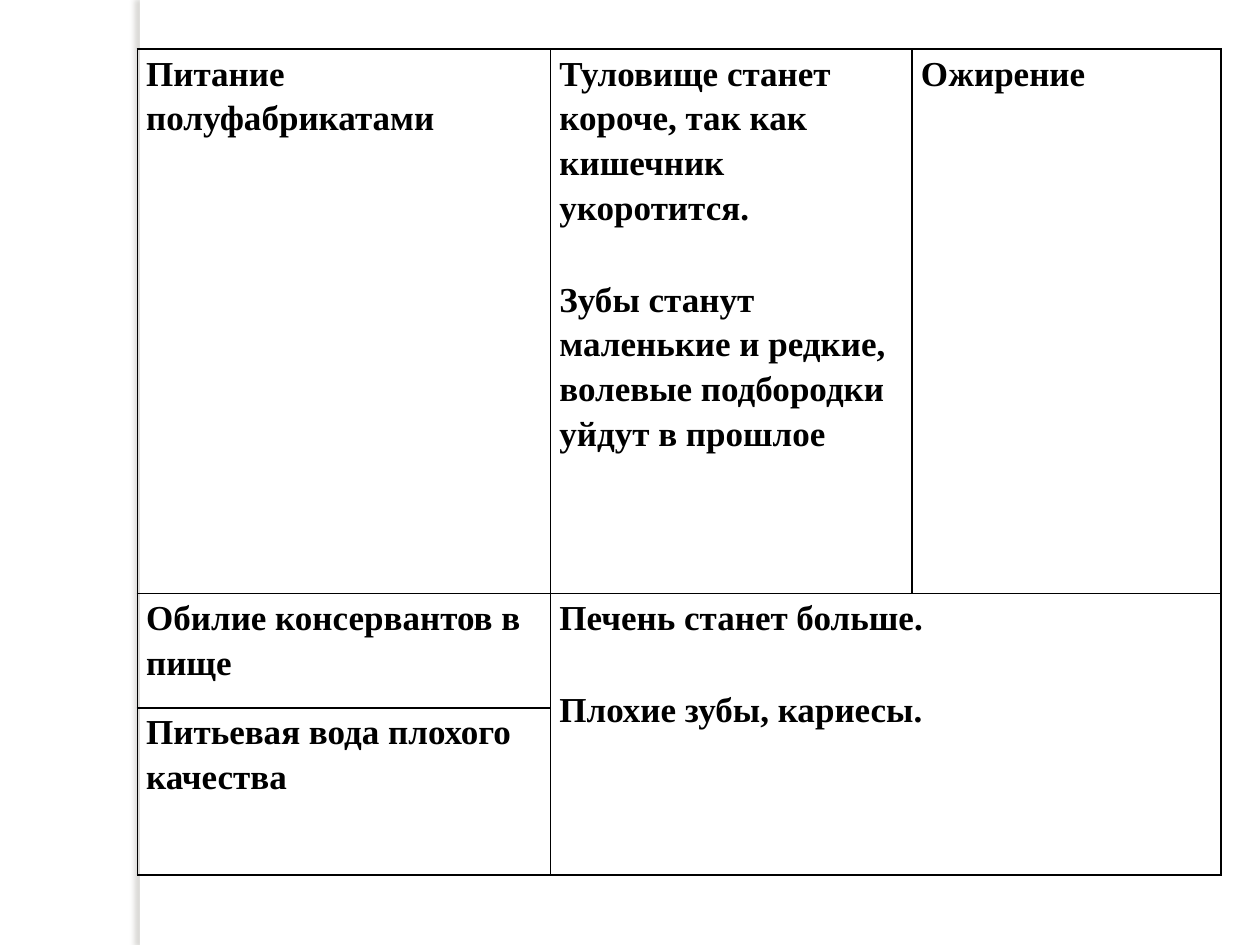
"""Builds a slide with a table of eating habits and their consequences for the body."""

from dataclasses import dataclass

from lxml.etree import SubElement
from pptx import Presentation
from pptx.dml.color import RGBColor
from pptx.enum.shapes import MSO_SHAPE as Preset
from pptx.oxml.ns import qn
from pptx.slide import Slide
from pptx.table import Table, _Cell as Cell
from pptx.util import Emu, Inches, Pt

BLACK = RGBColor(0x00, 0x00, 0x00)
WHITE = RGBColor(0xFF, 0xFF, 0xFF)
SHADOW = RGBColor(0x73, 0x6F, 0x63)
FONT = "Times New Roman"
SLIDE_WIDTH, SLIDE_HEIGHT = Inches(10), Inches(7.5)
TABLE_LEFT, TABLE_TOP = 0.109, 0.052
COLUMN_SHARES = (0.328, 0.287, 0.245)
ROW_SHARES = (0.576, 0.121, 0.177)
PARAGRAPH_GAP = Pt(27)


@dataclass(frozen=True)
class Entry:
    """Paragraphs of a table cell, with its grid place and span."""

    row: int
    column: int
    paragraphs: tuple[str, ...]
    row_span: int = 1
    column_span: int = 1


ENTRIES = (
    Entry(0, 0, ("Питание полуфабрикатами",)),
    Entry(0, 1, (
        "Туловище станет короче, так как кишечник укоротится.",
        "Зубы станут маленькие и редкие, волевые подбородки уйдут в прошлое",
    )),
    Entry(0, 2, ("Ожирение",)),
    Entry(1, 0, ("Обилие консервантов в пище",)),
    Entry(1, 1, ("Печень станет больше.", "Плохие зубы, кариесы."), 2, 2),
    Entry(2, 0, ("Питьевая вода плохого качества",)),
)


def across(share: float) -> Emu:
    """Return a share of the slide width."""
    return Emu(round(SLIDE_WIDTH * share))


def down(share: float) -> Emu:
    """Return a share of the slide height."""
    return Emu(round(SLIDE_HEIGHT * share))


def add_strip(slide: Slide) -> None:
    """Draw the white side strip that casts a shadow to the left."""
    strip = slide.shapes.add_shape(Preset.RECTANGLE, across(0.111), 0, across(0.008), SLIDE_HEIGHT)
    strip.fill.solid()
    strip.fill.fore_color.rgb = WHITE
    strip.line.fill.background()
    strip.shadow.inherit = False
    effects = strip._element.spPr.find(qn("a:effectLst"))
    shadow = SubElement(effects, qn("a:outerShdw"), blurRad=str(Pt(3)), dist=str(Pt(3)),
                        dir=str(180 * 60000), algn="ctr", rotWithShape="0")
    color = SubElement(shadow, qn("a:srgbClr"), val=str(SHADOW))
    SubElement(color, qn("a:alpha"), val="25000")


def style_cell(cell: Cell) -> None:
    """Give a cell thin black borders, narrow margins and no fill."""
    cell.margin_left = cell.margin_right = Inches(0.07)
    cell.margin_top = cell.margin_bottom = 0
    properties = cell._tc.get_or_add_tcPr()
    for side in ("lnL", "lnR", "lnT", "lnB"):
        border = SubElement(properties, qn(f"a:{side}"), w=str(Pt(1)))
        fill = SubElement(border, qn("a:solidFill"))
        SubElement(fill, qn("a:srgbClr"), val=str(BLACK))
    cell.fill.background()


def write_entry(table: Table, entry: Entry) -> None:
    """Merge the cells of an entry and write its paragraphs."""
    cell = table.cell(entry.row, entry.column)
    if entry.row_span > 1 or entry.column_span > 1:
        cell.merge(table.cell(entry.row + entry.row_span - 1,
                              entry.column + entry.column_span - 1))
    cell.text_frame.text = "\n".join(entry.paragraphs)
    for index, paragraph in enumerate(cell.text_frame.paragraphs):
        paragraph.line_spacing = 1.15
        paragraph.space_before = PARAGRAPH_GAP if index else Pt(0)
        for run in paragraph.runs:
            run.font.name = FONT
            run.font.size = Pt(20)
            run.font.bold = True
            run.font.color.rgb = BLACK


def add_habits_table(slide: Slide) -> None:
    """Add the table of habits and consequences."""
    frame = slide.shapes.add_table(
        len(ROW_SHARES), len(COLUMN_SHARES), across(TABLE_LEFT), down(TABLE_TOP),
        across(sum(COLUMN_SHARES)), down(sum(ROW_SHARES)))
    table = frame.table
    table.first_row = table.horz_banding = False
    for column, share in zip(table.columns, COLUMN_SHARES):
        column.width = across(share)
    for row, share in zip(table.rows, ROW_SHARES):
        row.height = down(share)
    for cell in table.iter_cells():
        style_cell(cell)
    for entry in ENTRIES:
        write_entry(table, entry)


def main() -> None:
    """Build and save the presentation."""
    presentation = Presentation()
    presentation.slide_width, presentation.slide_height = SLIDE_WIDTH, SLIDE_HEIGHT
    slide = presentation.slides.add_slide(presentation.slide_layouts[6])
    add_strip(slide)
    add_habits_table(slide)
    presentation.save("out.pptx")


if __name__ == "__main__":
    main()
